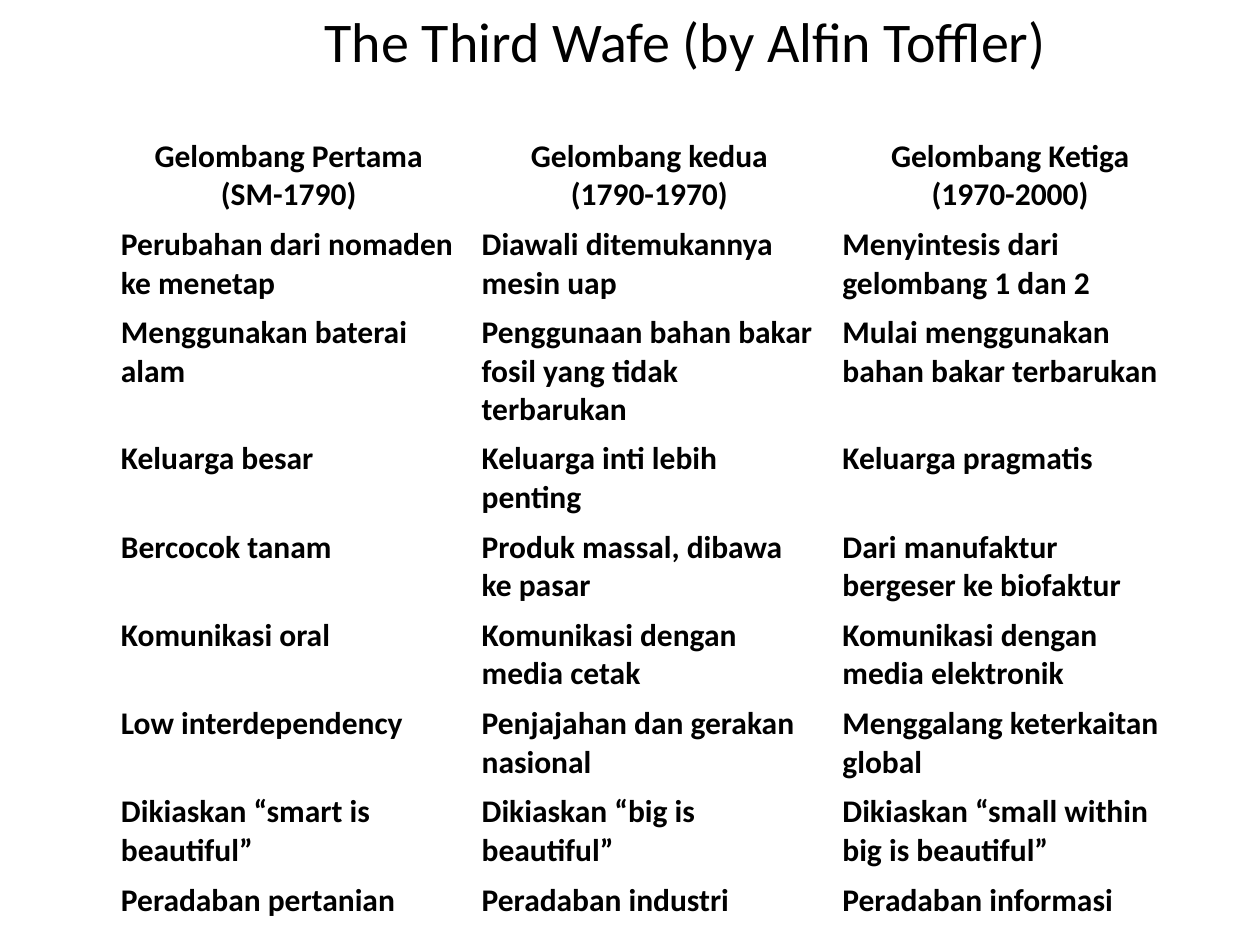
import pptx
import pptx.dml.color
import pptx.enum.text
import pptx.oxml
import pptx.oxml.ns
import pptx.util
from pptx.util import Inches


def color(hex_string):
    return pptx.dml.color.RGBColor.from_string(hex_string)


def add_border(cell, side, points):
    namespace = pptx.oxml.ns.nsdecls("a")
    cell._tc.get_or_add_tcPr().append(pptx.oxml.parse_xml(
        f'<a:{side} {namespace} w="{pptx.util.Pt(points)}"><a:solidFill>'
        f'<a:srgbClr val="FFFFFF"/></a:solidFill></a:{side}>'))


presentation = pptx.Presentation()
presentation.slide_width = Inches(10)
presentation.slide_height = Inches(7.5)
slide = presentation.slides.add_slide(presentation.slide_layouts[6])

# Title
title = slide.shapes.add_textbox(Inches(0.94), Inches(-0.31), Inches(9), Inches(1.25))
title.text_frame.word_wrap = True
title.text_frame.vertical_anchor = pptx.enum.text.MSO_ANCHOR.MIDDLE
paragraph = title.text_frame.paragraphs[0]
paragraph.text = "The Third Wafe (by Alfin Toffler)"
paragraph.alignment = pptx.enum.text.PP_ALIGN.CENTER
paragraph.font.name = "Calibri"
paragraph.font.size = pptx.util.Pt(32)
paragraph.font.color.rgb = color("000000")

# Comparison of the three waves: row height, then one text per wave
waves = [
    (0.6, "Gelombang Pertama\n(SM-1790)", "Gelombang kedua\n(1790-1970)",
     "Gelombang Ketiga\n(1970-2000)"),
    (0.6, "Perubahan dari nomaden ke menetap", "Diawali ditemukannya mesin uap",
     "Menyintesis dari gelombang 1 dan 2"),
    (0.86, "Menggunakan baterai alam", "Penggunaan bahan bakar fosil yang tidak terbarukan",
     "Mulai menggunakan bahan bakar terbarukan"),
    (0.6, "Keluarga besar", "Keluarga inti lebih penting", "Keluarga pragmatis"),
    (0.6, "Bercocok tanam", "Produk massal, dibawa ke pasar",
     "Dari manufaktur bergeser ke biofaktur"),
    (0.6, "Komunikasi oral", "Komunikasi dengan media cetak",
     "Komunikasi dengan media elektronik"),
    (0.6, "Low interdependency", "Penjajahan dan gerakan nasional",
     "Menggalang keterkaitan global"),
    (0.6, "Dikiaskan “smart is beautiful”", "Dikiaskan “big is beautiful”",
     "Dikiaskan “small within big is beautiful”"),
    (0.35, "Peradaban pertanian", "Peradaban industri", "Peradaban informasi"),
]
table = slide.shapes.add_table(
    len(waves), 3, Inches(0.86), Inches(1.04), Inches(8.59), Inches(6.3)).table
table.horz_banding = False

for row_index, (height, *texts) in enumerate(waves):
    table.rows[row_index].height = Inches(height)
    is_header = row_index == 0
    for column_index, text in enumerate(texts):
        cell = table.cell(row_index, column_index)
        cell.text = text
        for side in ("lnL", "lnR", "lnT", "lnB"):
            heavy = (is_header and side == "lnB") or (row_index == 1 and side == "lnT")
            add_border(cell, side, 3 if heavy else 1)
        cell.fill.background()
        for paragraph in cell.text_frame.paragraphs:
            if is_header:
                paragraph.alignment = pptx.enum.text.PP_ALIGN.CENTER
            paragraph.font.name = "Calibri"
            paragraph.font.size = pptx.util.Pt(18)
            paragraph.font.bold = True
            paragraph.font.color.rgb = color("000000")

presentation.save("out.pptx")
